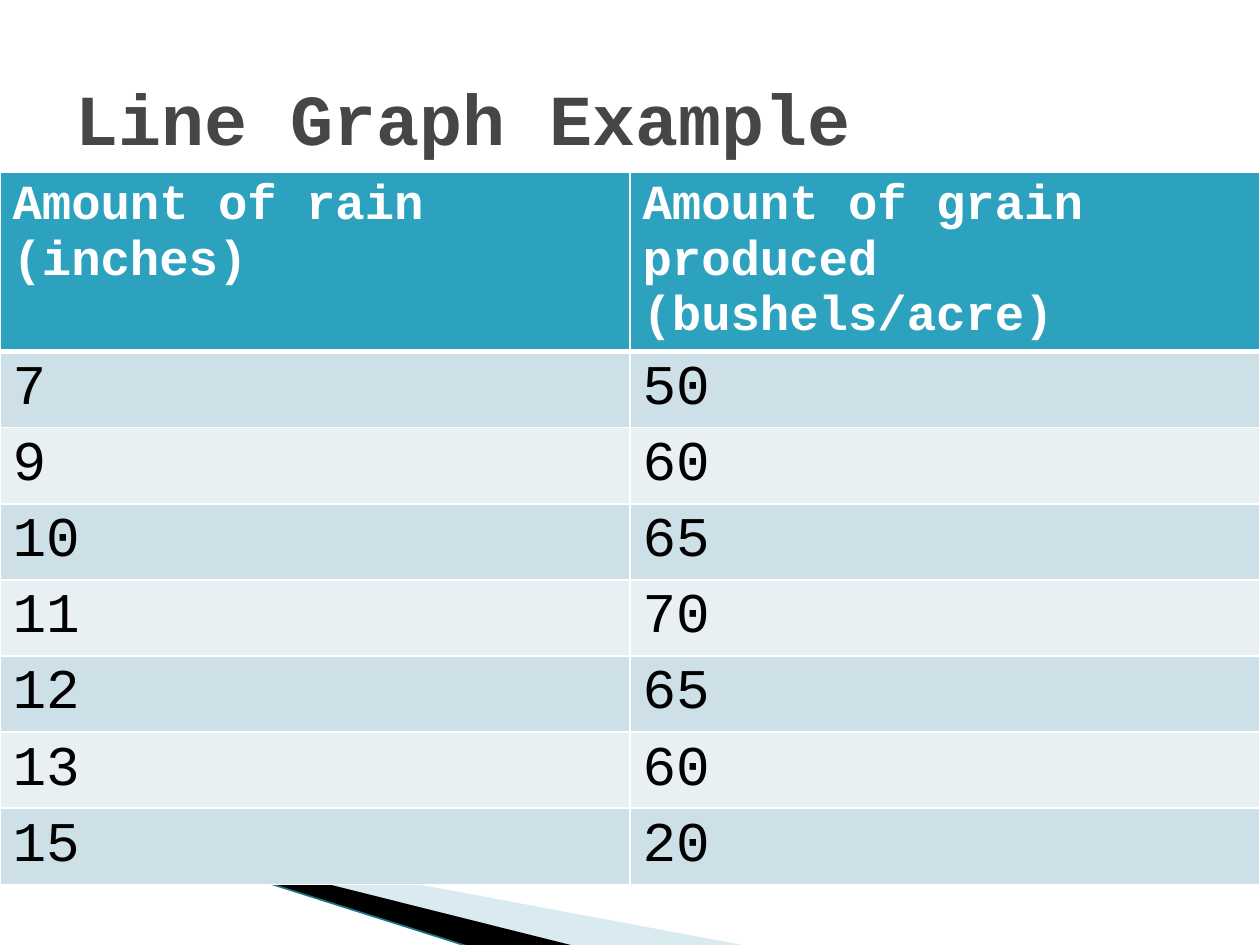
from lxml import etree
from pptx import Presentation
from pptx import util as u
from pptx.dml.color import RGBColor
from pptx.enum import shapes, text
from pptx.oxml.ns import qn

FONT = "Courier New"
WHITE = "FFFFFF"
HEADINGS = ("Amount of rain (inches)", "Amount of grain produced (bushels/acre)")
HARVESTS = ((7, 50), (9, 60), (10, 65), (11, 70), (12, 65), (13, 60), (15, 20))


def colour(value):
    return RGBColor.from_string(value)


def paint(part, value):
    part.fill.solid()
    part.fill.fore_color.rgb = colour(value)


def write(frame, words, size=32, ink="000000", bold=False, align=text.PP_ALIGN.LEFT):
    frame.word_wrap = True
    paragraph = frame.paragraphs[0]
    paragraph.alignment = align
    run = paragraph.add_run()
    run.text = words
    run.font.name = FONT
    run.font.size = u.Pt(size)
    run.font.bold = bold
    run.font.color.rgb = colour(ink)


def fit_frame(wedge, left, top, width, height):
    shift_x, shift_y = wedge.left - u.Inches(left), wedge.top - u.Inches(top)
    wedge.left, wedge.top = u.Inches(left), u.Inches(top)
    wedge.width, wedge.height = u.Inches(width), u.Inches(height)
    outline = next(wedge._element.iter(qn("a:path")))
    outline.set("w", str(wedge.width))
    outline.set("h", str(wedge.height))
    for point in outline.iter(qn("a:pt")):
        point.set("x", str(int(point.get("x")) + shift_x))
        point.set("y", str(int(point.get("y")) + shift_y))


def add_wedge(slide, frame, corners, fill, opacity=100):
    points = [(u.Inches(x), u.Inches(y)) for x, y in corners]
    builder = slide.shapes.build_freeform(*points[0])
    builder.add_line_segments(points[1:], close=True)
    wedge = builder.convert_to_shape()
    fit_frame(wedge, *frame)
    wedge.shadow.inherit = False
    wedge.line.fill.background()
    paint(wedge, fill)
    if opacity < 100:
        tint = wedge.fill._xPr.find(qn("a:solidFill"))[0]
        etree.SubElement(tint, qn("a:alpha"), val=str(opacity * 1000))


def add_decoration(slide, left, top, right, bottom):
    add_wedge(slide, (0.78, 5.47, 4.16, 1.58),
              [(left, top), (5.95, bottom), (4.56, bottom)], "A0CBDC", 40)
    add_wedge(slide, (-0.06, 6.33, 4.16, 0.92),
              [(left, top), (4.57, bottom), (right, bottom)], "000000")
    edge = slide.shapes.add_connector(
        shapes.MSO_CONNECTOR.STRAIGHT,
        u.Inches(-0.01), u.Inches(6.33), u.Inches(right), u.Inches(bottom))
    edge.line.color.rgb = colour("1B7587")
    edge.line.width = u.Pt(0.95)
    etree.SubElement(edge._element.spPr, qn("a:effectLst"))


def set_borders(cell, **widths):
    properties = cell._tc.get_or_add_tcPr()
    for position, (side, width) in enumerate(widths.items()):
        border = etree.Element(qn(f"a:ln{side}"), w=str(u.Pt(width)))
        fill = etree.SubElement(border, qn("a:solidFill"))
        etree.SubElement(fill, qn("a:srgbClr"), val=WHITE)
        properties.insert(position, border)


def add_harvest_table(slide, left, top, width, header_height, row_height):
    rows = (HEADINGS,) + HARVESTS
    height = header_height + row_height * len(HARVESTS)
    table = slide.shapes.add_table(
        len(rows), len(HEADINGS), u.Inches(left), u.Inches(top),
        u.Inches(width), u.Inches(height)).table
    for r, values in enumerate(rows):
        is_header = r == 0
        table.rows[r].height = u.Inches(header_height if is_header else row_height)
        for c, value in enumerate(values):
            cell = table.cell(r, c)
            if is_header:
                paint(cell, "2DA2BF")
                write(cell.text_frame, value, size=28, ink=WHITE, bold=True)
            else:
                paint(cell, "CDE0E8" if r % 2 else "E8F0F4")
                write(cell.text_frame, str(value))
            set_borders(cell, L=1, R=1, T=3 if r == 1 else 1, B=3 if is_header else 1)


def place_title(slide, left, top, width, height):
    title = slide.shapes.title
    title.left, title.top = u.Inches(left), u.Inches(top)
    title.width, title.height = u.Inches(width), u.Inches(height)
    title.text_frame.vertical_anchor = text.MSO_ANCHOR.MIDDLE
    write(title.text_frame, "Line Graph Example", size=41, ink="464646", bold=True)
    slide.shapes._spTree.append(title._element)


def main():
    deck = Presentation()
    deck.slide_width, deck.slide_height = u.Inches(10), u.Inches(7.5)
    slide = deck.slides.add_slide(deck.slide_layouts[5])
    slide.background.fill.solid()
    slide.background.fill.fore_color.rgb = colour(WHITE)
    add_decoration(slide, 0.54, 6.5, 3.71, 7.51)
    add_harvest_table(slide, 0, 1.37, 10, 1.41, 0.6)
    place_title(slide, 0.5, 0.3, 9, 1.25)
    deck.save("out.pptx")


if __name__ == "__main__":
    main()
